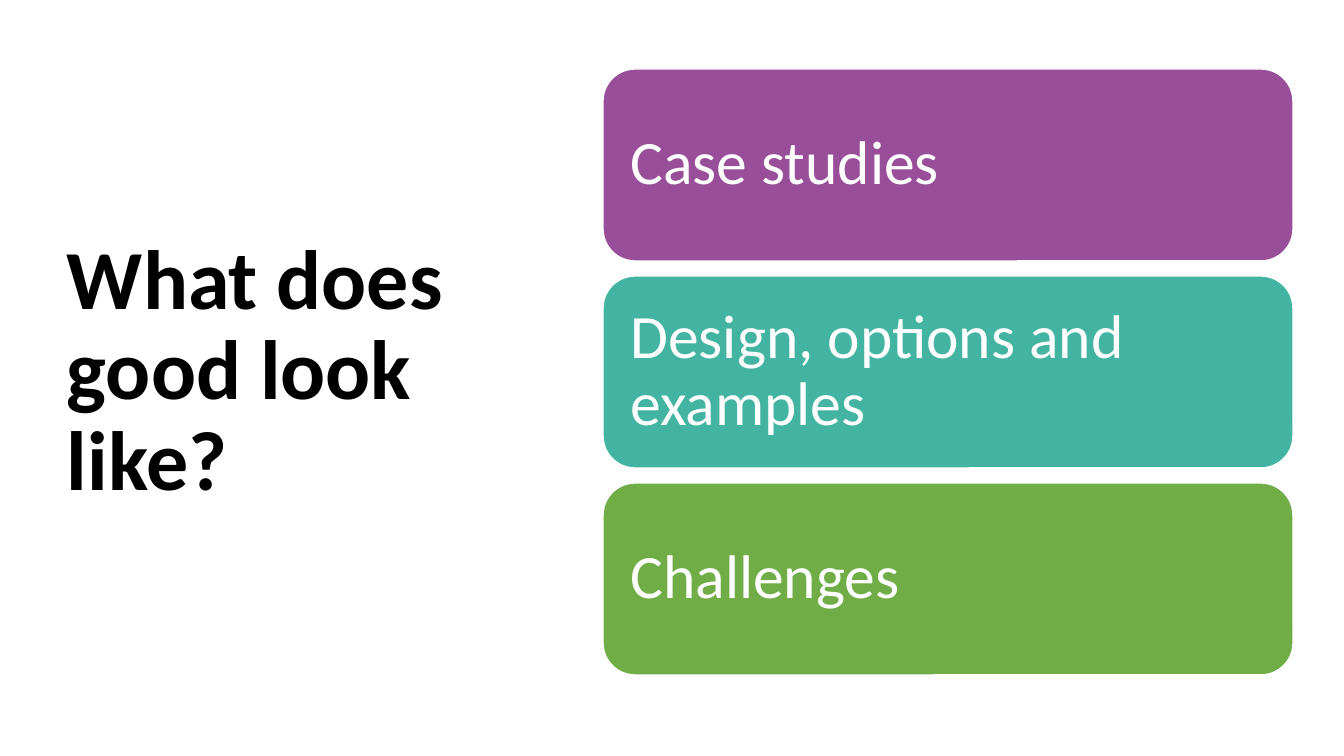
from pptx import Presentation
from pptx.dml.color import RGBColor
from pptx.enum.shapes import MSO_SHAPE
from pptx.enum.text import MSO_ANCHOR, PP_ALIGN
from pptx.util import Pt

ROUND = MSO_SHAPE.ROUNDED_RECTANGLE
MIDDLE = MSO_ANCHOR.MIDDLE
LEFT = PP_ALIGN.LEFT

TITLE = "What does good look like?"
CARDS = [
    ("Case studies", "994E99"),
    ("Design, options and examples", "42B4A1"),
    ("Challenges", "70AD47"),
]
SLIDE = (1344, 756)
TITLE_BOX = (57, 69, 419, 607)
CARD_BOX = (603, 69, 690, 192)
PITCH = 207


def px(n):
    """Turn px into EMU, at 100.8 px to the inch."""
    return round(n * 914400 / 100.8)


def color(code):
    return RGBColor.from_string(code)


def write(shape, text, size, ink, bold=False, side=10, edge=5):
    frame = shape.text_frame
    frame.word_wrap = True
    frame.vertical_anchor = MIDDLE
    frame.margin_left = frame.margin_right = px(side)
    frame.margin_top = frame.margin_bottom = px(edge)
    para = frame.paragraphs[0]
    para.alignment = LEFT
    para.line_spacing = 0.9
    run = para.add_run()
    run.text = text
    font = run.font
    font.name = "Calibri"
    font.size = Pt(size)
    font.bold = bold
    font.color.rgb = color(ink)


def main():
    deck = Presentation()
    deck.slide_width, deck.slide_height = map(px, SLIDE)
    slide = deck.slides.add_slide(deck.slide_layouts[6])

    title = slide.shapes.add_textbox(*map(px, TITLE_BOX))
    write(title, TITLE, 60, "000000", bold=True)

    left, top, width, height = CARD_BOX
    for i, (text, fill) in enumerate(CARDS):
        box = (left, top + i * PITCH, width, height)
        card = slide.shapes.add_shape(ROUND, *map(px, box))
        card.shadow.inherit = False
        card.fill.solid()
        card.fill.fore_color.rgb = color(fill)
        card.line.color.rgb = color("FFFFFF")
        card.line.width = Pt(1)
        write(card, text, 44, "FFFFFF", side=18, edge=18)

    deck.save("out.pptx")


if __name__ == "__main__":
    main()
